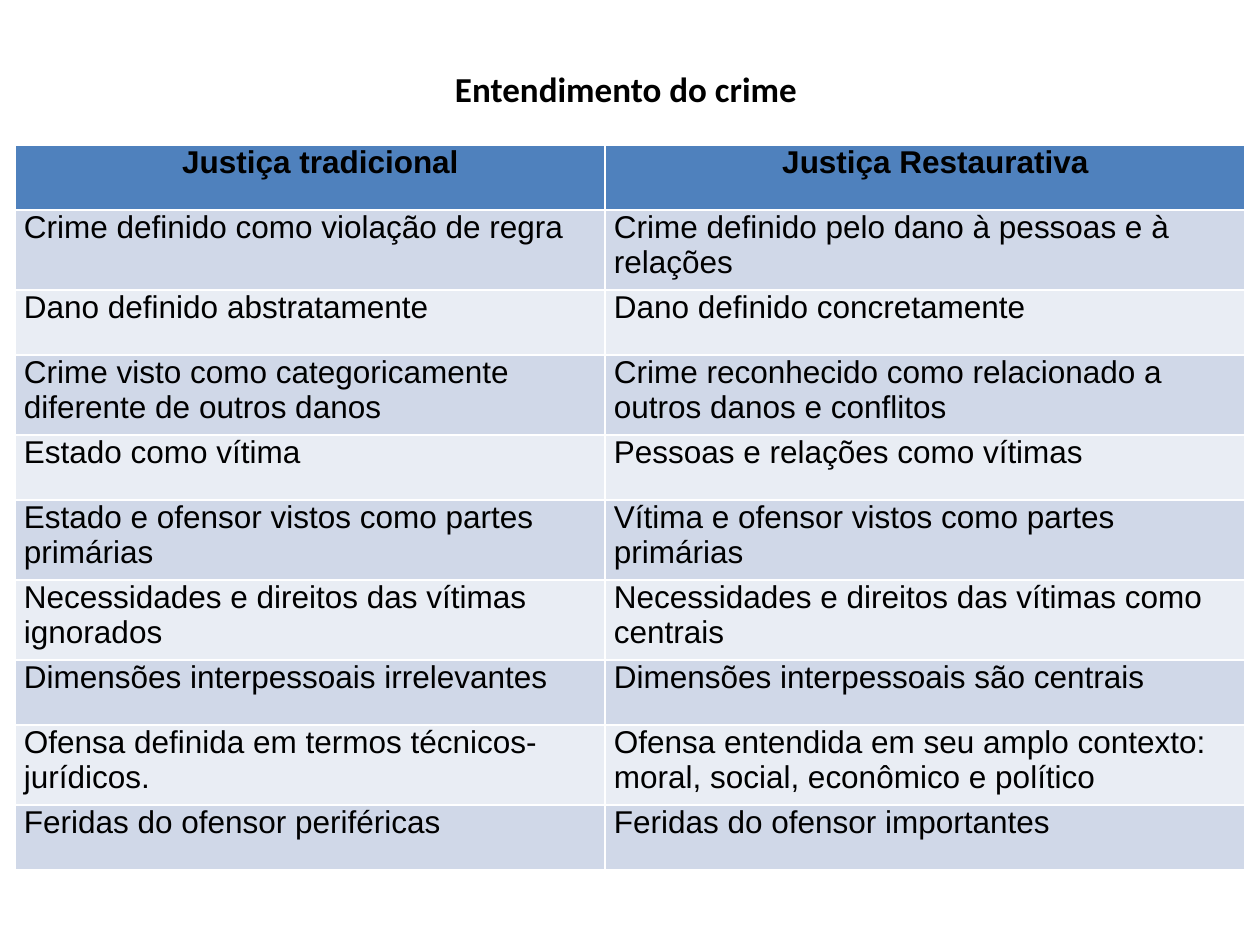
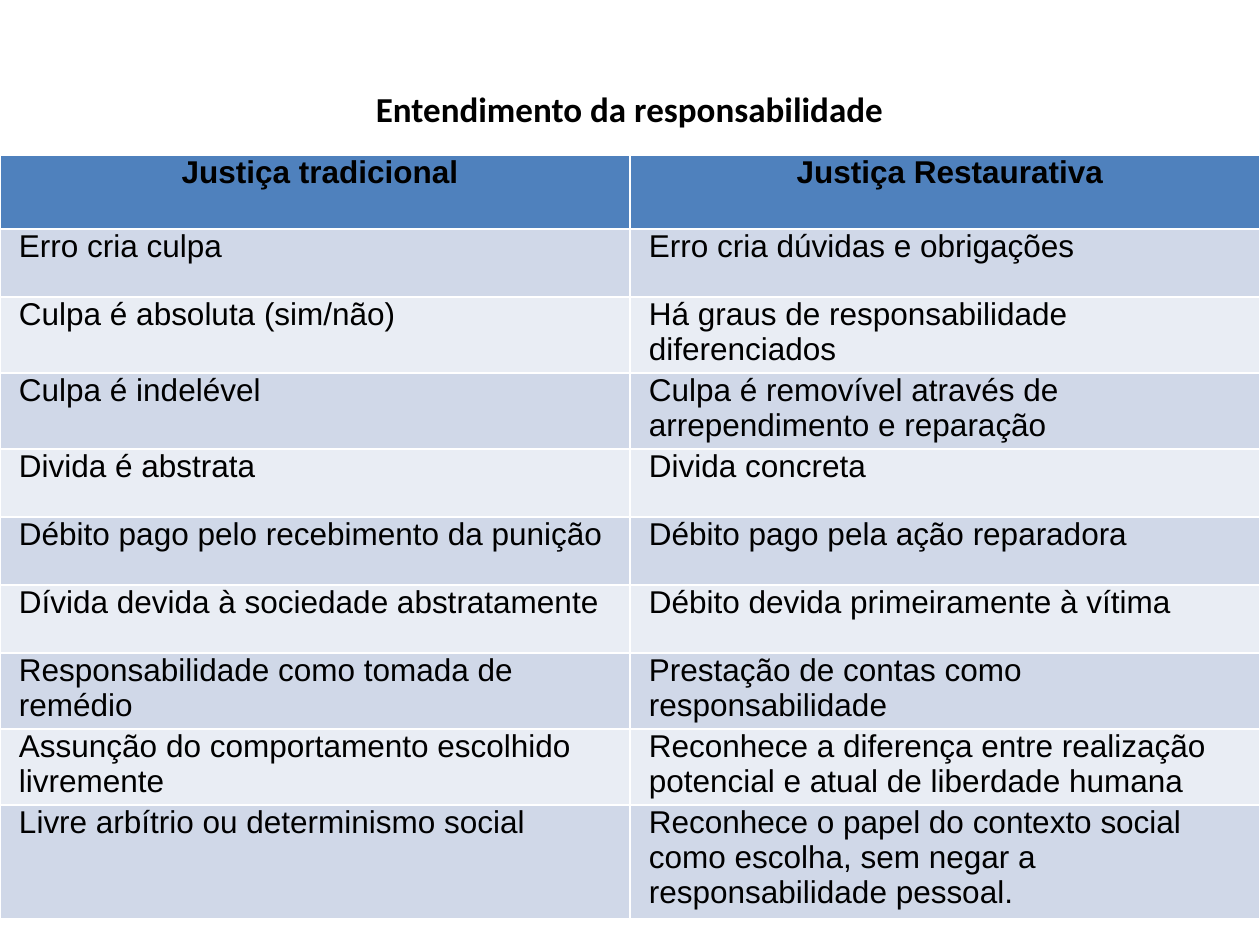
from pptx import Presentation
from pptx.dml.color import RGBColor
from pptx.enum.text import MSO_ANCHOR, PP_ALIGN
from pptx.util import Pt

PX = 914400 // 126
CENTER, LEFT = PP_ALIGN.CENTER, PP_ALIGN.LEFT
BOTTOM, TOP = MSO_ANCHOR.BOTTOM, MSO_ANCHOR.TOP
COLORS = {"text": "000000", "head": "4F81BD", "odd": "D0D8E8", "even": "E9EDF4"}
TITLE_FONT = {"name": "Calibri", "size": Pt(20), "bold": True}
HEAD_FONT = {"name": "Arial", "size": Pt(18), "bold": True}
BODY_FONT = {**HEAD_FONT, "bold": False}
CELL_FORMAT = {"margin_left": 9 * PX, "margin_right": 9 * PX, "margin_top": 0,
               "margin_bottom": 0, "vertical_anchor": TOP}
HEADERS = ("Justiça tradicional", "Justiça Restaurativa")

CRIME = [
    ("Crime definido como violação de regra",
     "Crime definido pelo dano à pessoas e à relações"),
    ("Dano definido abstratamente", "Dano definido concretamente"),
    ("Crime visto como categoricamente diferente de outros danos",
     "Crime reconhecido como relacionado a outros danos e conflitos"),
    ("Estado como vítima", "Pessoas e relações como vítimas"),
    ("Estado e ofensor vistos como partes primárias",
     "Vítima e ofensor vistos como partes primárias"),
    ("Necessidades e direitos das vítimas ignorados",
     "Necessidades e direitos das vítimas como centrais"),
    ("Dimensões interpessoais irrelevantes", "Dimensões interpessoais são centrais"),
    ("Ofensa definida em termos técnicos-jurídicos.",
     "Ofensa entendida em seu amplo contexto: moral, social, econômico e político"),
    ("Feridas do ofensor periféricas", "Feridas do ofensor importantes"),
]
RESPONSIBILITY = [
    ("Erro cria culpa", "Erro cria dúvidas e obrigações"),
    ("Culpa é absoluta (sim/não)", "Há graus de responsabilidade diferenciados"),
    ("Culpa é indelével", "Culpa é removível através de arrependimento e reparação"),
    ("Divida é abstrata", "Divida concreta"),
    ("Débito pago pelo recebimento da punição", "Débito pago pela ação reparadora"),
    ("Dívida devida à sociedade abstratamente", "Débito devida primeiramente à vítima"),
    ("Responsabilidade como tomada de remédio",
     "Prestação de contas como responsabilidade"),
    ("Assunção do comportamento escolhido livremente",
     "Reconhece a diferença entre realização potencial e atual de liberdade humana"),
    ("Livre arbítrio ou determinismo social",
     "Reconhece o papel do contexto social como escolha, "
     "sem negar a responsabilidade pessoal."),
]
SLIDES = [
    {"title": "Entendimento do crime ", "title_box": (0, 26, 1260, 90),
     "rows": CRIME, "origin": (15, 145), "widths": (590, 640),
     "heights": (65, 80, 65, 80, 65, 80, 80, 65, 80, 65),
     "head_indent": 21, "body_indent": 0},
    {"title": "Entendimento da responsabilidade", "title_box": (63, 30, 1133, 106),
     "rows": RESPONSIBILITY, "origin": (0, 155), "widths": (630, 630),
     "heights": (74, 68, 76, 76, 68, 68, 68, 76, 76, 113),
     "head_indent": 10, "body_indent": 10},
]


def apply(obj, values):
    """Set each attribute of obj named in values."""
    for name, value in values.items():
        setattr(obj, name, value)


def write(tf, text, font, align):
    """Fill the first paragraph of a text frame and return it."""
    p = tf.paragraphs[0]
    p.alignment = align
    r = p.add_run()
    r.text = text
    apply(r.font, font)
    r.font.color.rgb = RGBColor.from_string(COLORS["text"])
    return p


def add_title(s, box, text):
    """Add a centred title resting on the bottom of its box."""
    tf = s.shapes.add_textbox(*(v * PX for v in box)).text_frame
    apply(tf, {"word_wrap": True, "vertical_anchor": BOTTOM})
    write(tf, text, TITLE_FONT, CENTER)


def add_comparison(s, data):
    """Add the two-column comparison table with banded rows."""
    rows = [HEADERS, *data["rows"]]
    widths, heights = data["widths"], data["heights"]
    box = (*data["origin"], sum(widths), sum(heights))
    table = s.shapes.add_table(len(rows), len(widths), *(v * PX for v in box)).table
    for column, width in zip(table.columns, widths):
        column.width = width * PX
    for i, (texts, height) in enumerate(zip(rows, heights)):
        table.rows[i].height = height * PX
        band = "head" if i == 0 else "odd" if i % 2 else "even"
        font, align = (HEAD_FONT, CENTER) if i == 0 else (BODY_FONT, LEFT)
        indent = data["head_indent" if i == 0 else "body_indent"]
        for j, text in enumerate(texts):
            cell = table.cell(i, j)
            apply(cell, CELL_FORMAT)
            cell.fill.solid()
            cell.fill.fore_color.rgb = RGBColor.from_string(COLORS[band])
            p = write(cell.text_frame, text, font, align)
            p._p.get_or_add_pPr().set("marL", str(indent * PX))


def main():
    """Build the slides and save them."""
    prs = Presentation()
    prs.slide_width, prs.slide_height = 9144000, 6858000
    for data in SLIDES:
        s = prs.slides.add_slide(prs.slide_layouts[6])
        add_title(s, data["title_box"], data["title"])
        add_comparison(s, data)
    prs.save("out.pptx")


if __name__ == "__main__":
    main()
